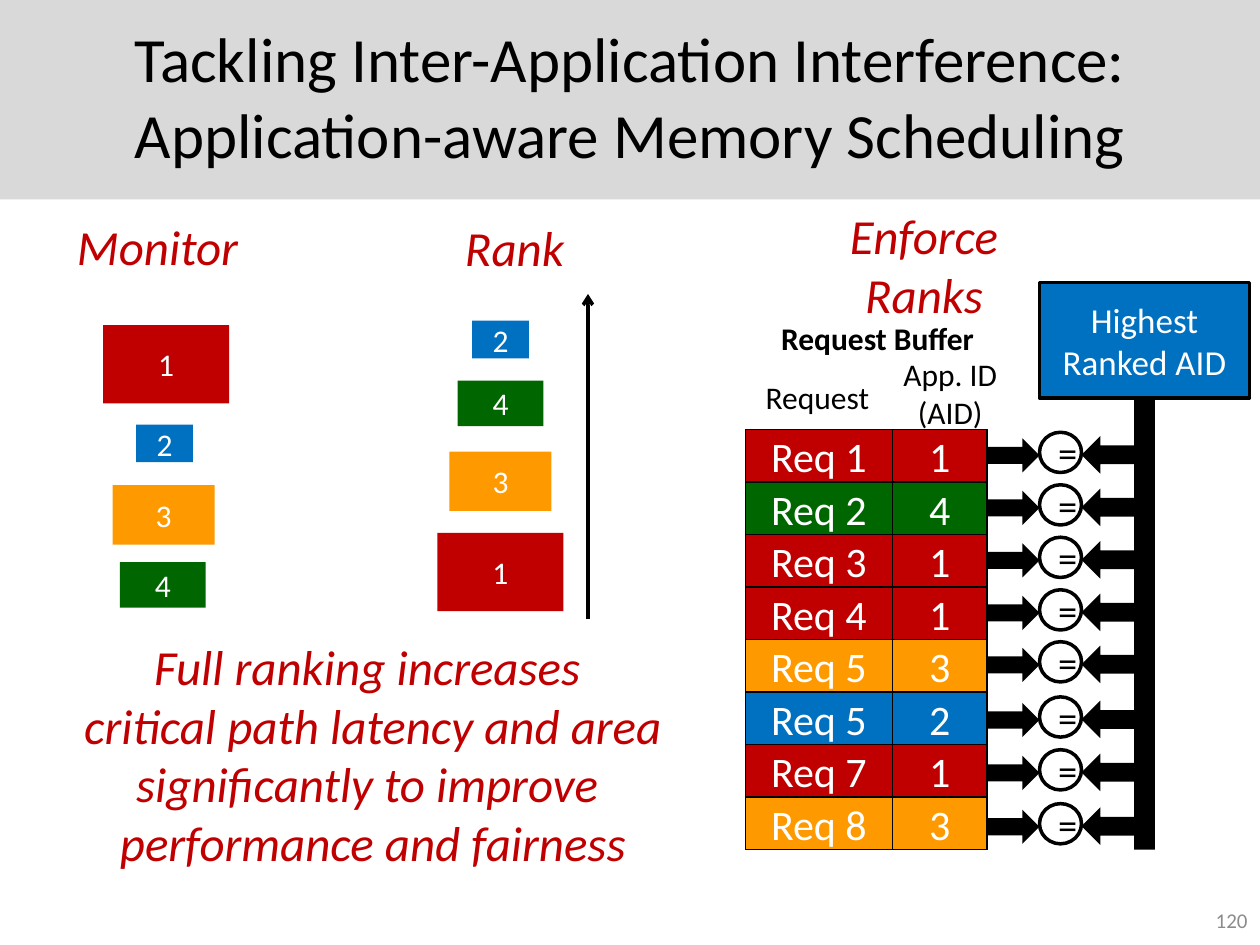
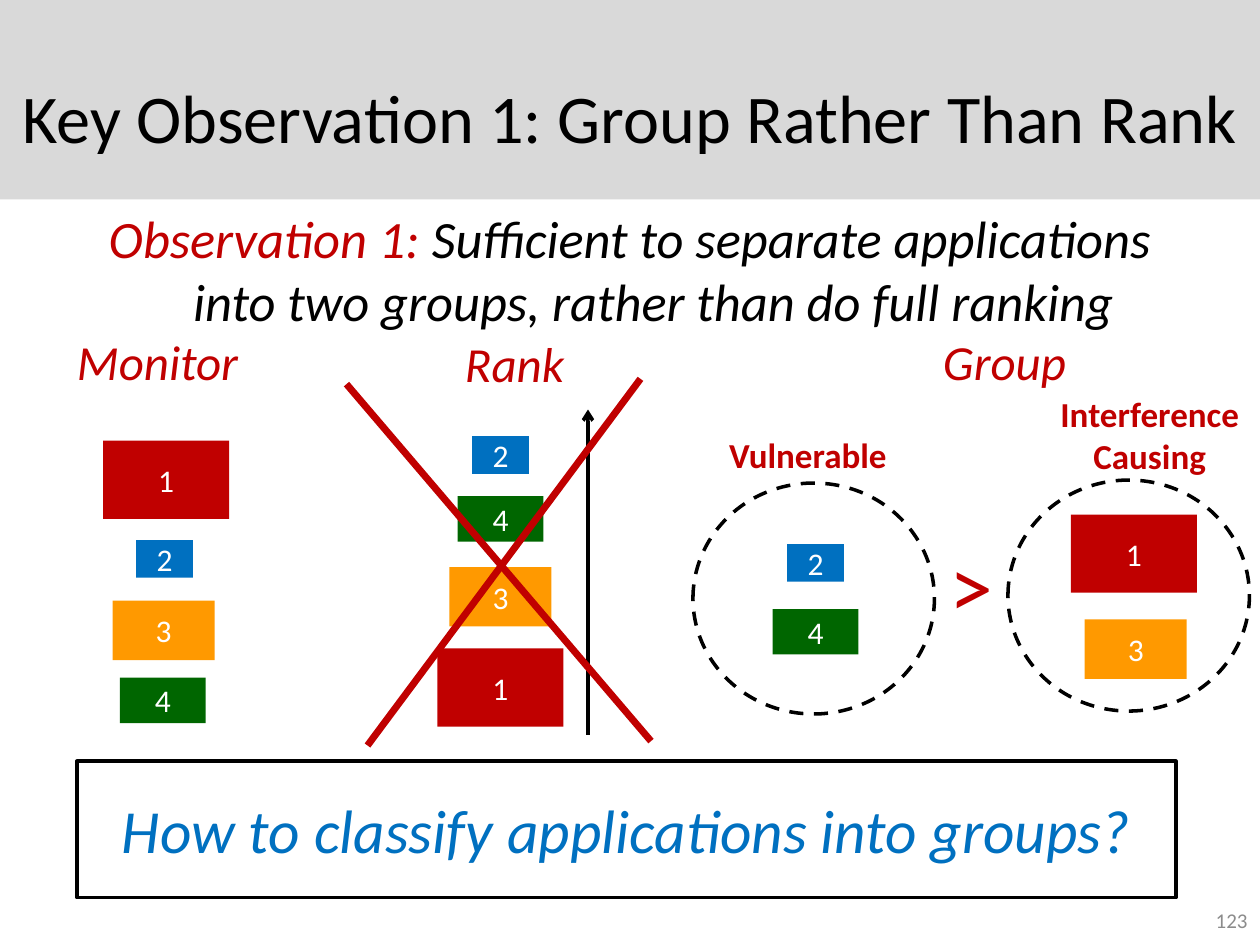
"""Build two slides on application-aware memory scheduling: full ranking versus grouping."""
from lxml.etree import SubElement
from pptx import Presentation
from pptx.dml.color import RGBColor
from pptx.enum.dml import MSO_LINE
from pptx.enum.shapes import MSO_CONNECTOR, MSO_SHAPE as SHAPE
from pptx.enum.text import MSO_ANCHOR as ANCHOR, PP_ALIGN as ALIGN
from pptx.oxml.ns import qn
from pptx.util import Pt

RED = RGBColor(0xC0, 0x00, 0x00)
GREEN = RGBColor(0x00, 0x66, 0x00)
ORANGE = RGBColor(0xFF, 0x99, 0x00)
BLUE = RGBColor(0x00, 0x70, 0xC0)
BLACK = RGBColor(0x00, 0x00, 0x00)
WHITE = RGBColor(0xFF, 0xFF, 0xFF)
BAND = RGBColor(0xD9, 0xD9, 0xD9)
GREY = RGBColor(0x8C, 0x8C, 0x8C)

FONT = "Calibri"
WIDTH, HEIGHT, BAND_HEIGHT = 720, 540, 114

HEADING = {"size": 28, "color": RED, "italic": True}
GROUP_NAME = {"size": 20, "color": RED, "bold": True}
LABEL = {"size": 18, "color": BLACK}

APPS = {
    "1": (72, 44.7, RED),
    "2": (32.5, 21.5, BLUE),
    "3": (58.3, 34, ORANGE),
    "4": (49, 26, GREEN),
}
MONITORED = [("4", 93, 321.2), ("3", 93.5, 277.2), ("2", 94, 242.7), ("1", 95, 185.8)]
RANKED = [("2", 286, 183.3), ("4", 286, 217.5), ("3", 286, 258), ("1", 286, 304.5)]
GROUPED = [("4", 466, 348), ("2", 466, 311), ("3", 649, 354), ("1", 648, 294)]

REQUESTS = [
    ("Req 1", "1", 247), ("Req 2", "4", 277), ("Req 3", "1", 307), ("Req 4", "1", 337),
    ("Req 5", "3", 366.7), ("Req 5", "2", 398.2), ("Req 7", "1", 428.4), ("Req 8", "3", 459.2),
]
BUFFER_LEFT, BUFFER_TOP, ROW_HEIGHT = 426, 245.5, 30
REQUEST_WIDTH, AID_WIDTH = 84, 54

TITLES = {
    "enforce": "Tackling Inter-Application Interference:\nApplication-aware Memory Scheduling",
    "group": "Key Observation 1: Group Rather Than Rank",
}
FULL_RANKING = [
    "Full ranking increases ",
    "critical path latency and area significantly to improve ",
    "performance and fairness",
]
OBSERVATION = [
    ("Observation 1:", RED),
    (" Sufficient to separate applications into two groups, rather than do full ranking", BLACK),
]
QUESTION = "How to classify applications into groups?"


def write(tf, paras, size, color, align=ALIGN.CENTER, anchor=ANCHOR.MIDDLE, **font):
    tf.word_wrap = True
    tf.vertical_anchor = anchor
    for i, text in enumerate([paras] if isinstance(paras, str) else paras):
        p = tf.paragraphs[0] if i == 0 else tf.add_paragraph()
        p.text = text
        p.alignment = align
        for r in p.runs:
            style(r, size, color, **font)


def style(r, size, color, **font):
    r.font.color.rgb = color
    for name, value in {"name": FONT, "size": Pt(size), **font}.items():
        setattr(r.font, name, value)


def add_text(s, paras, x, y, w, h, **fmt):
    tf = s.shapes.add_textbox(Pt(x), Pt(y), Pt(w), Pt(h)).text_frame
    write(tf, paras, **{"anchor": ANCHOR.TOP, **fmt})


def add_box(s, x, y, w, h, fill=None, line=0, kind=SHAPE.RECTANGLE, text="", size=18, color=WHITE, **font):
    sp = s.shapes.add_shape(kind, Pt(x), Pt(y), Pt(w), Pt(h))
    sp.shadow.inherit = False
    if fill is None:
        sp.fill.background()
    else:
        sp.fill.solid()
        sp.fill.fore_color.rgb = fill
    if line:
        sp.line.color.rgb = BLACK
        sp.line.width = Pt(line)
    else:
        sp.line.fill.background()
    if text:
        write(sp.text_frame, text, size, color, **font)
    return sp


def add_line(s, x1, y1, x2, y2, color, width, arrow=False):
    c = s.shapes.add_connector(MSO_CONNECTOR.STRAIGHT, Pt(x1), Pt(y1), Pt(x2), Pt(y2))
    c.line.color.rgb = color
    c.line.width = Pt(width)
    if arrow:
        SubElement(c.line._get_or_add_ln(), qn("a:tailEnd"), type="arrow")
    SubElement(c._element.spPr, qn("a:effectLst"))


def add_apps(s, apps, dy=0):
    for app, center, top in apps:
        w, h, fill = APPS[app]
        add_box(s, center - w / 2, top + dy, w, h, fill, text=app)


def add_monitor_and_rank(s, dy=0):
    add_text(s, "Monitor", 30, 120 + dy, 120, 41, **HEADING)
    add_text(s, "Rank", 234, 121 + dy, 120, 41, **HEADING)
    add_apps(s, MONITORED + RANKED, dy)
    add_line(s, 336, 354 + dy, 336, 168 + dy, BLACK, 2, arrow=True)


def new_slide(prs, title, number, title_box, title_size):
    s = prs.slides.add_slide(prs.slide_layouts[6])
    add_box(s, 0, 0, WIDTH, BAND_HEIGHT, BAND)
    add_text(s, title, *title_box, size=title_size, color=BLACK, anchor=ANCHOR.MIDDLE)
    add_text(s, number, 552, 511, 168, 29, size=12, color=GREY,
             align=ALIGN.RIGHT, anchor=ANCHOR.MIDDLE)
    return s


def add_request_buffer(s):
    add_text(s, "Request Buffer", 417.5, 179, 168, 29, bold=True, **LABEL)
    add_text(s, "Request", 430.5, 212.5, 78, 29, align=ALIGN.LEFT, **LABEL)
    add_text(s, "App. ID (AID)", 492, 199.5, 102, 51, **LABEL)
    add_box(s, BUFFER_LEFT, BUFFER_TOP, REQUEST_WIDTH + AID_WIDTH, ROW_HEIGHT * len(REQUESTS), line=1)
    for i, (request, app, _) in enumerate(REQUESTS):
        y = BUFFER_TOP + i * ROW_HEIGHT
        cells = [(request, BUFFER_LEFT, REQUEST_WIDTH), (app, BUFFER_LEFT + REQUEST_WIDTH, AID_WIDTH)]
        for text, x, w in cells:
            add_box(s, x, y, w, ROW_HEIGHT, APPS[app][2], line=1, text=text, size=24)


def add_comparators(s):
    add_box(s, 648, 227.5, 12, 258, BLACK)
    for _, _, top in REQUESTS:
        add_box(s, 618, top + 2.2, 30, 21.5, BLACK, kind=SHAPE.LEFT_ARROW)
        add_box(s, 564, top + 3.5, 30, 19.5, BLACK, kind=SHAPE.RIGHT_ARROW)
        add_box(s, 594, top, 24, 23, line=2, kind=SHAPE.OVAL, text="=", size=22, color=BLACK)


def build_enforce(prs):
    s = new_slide(prs, TITLES["enforce"], "120", (36, 9.4, 648, 90), 36)
    add_monitor_and_rank(s)
    add_box(s, 594, 161.5, 120, 66, BLUE, line=2, text="Highest Ranked AID", size=20)
    add_text(s, ["Enforce", "Ranks"], 468, 114, 120, 75, **HEADING)
    add_text(s, FULL_RANKING, 0, 360, 426, 143, **HEADING)
    add_request_buffer(s)
    add_comparators(s)


def add_observation(s):
    tf = s.shapes.add_textbox(Pt(36), Pt(BAND_HEIGHT), Pt(648), Pt(384)).text_frame
    tf.word_wrap = True
    p = tf.paragraphs[0]
    p.alignment = ALIGN.CENTER
    p.space_before = Pt(6)
    for name, value in {"marL": Pt(27), "indent": Pt(-27)}.items():
        p._p.get_or_add_pPr().set(name, str(value))
    for text, color in OBSERVATION:
        r = p.add_run()
        r.text = text
        style(r, 30, color, italic=True)


def build_group(prs):
    s = new_slide(prs, TITLES["group"], "123", (0, 21.6, WIDTH, 90), 39)
    add_observation(s)
    add_text(s, "Group", 514, 186, 120, 41, **HEADING)
    for x, y in [(396, 276), (576, 274.3)]:
        sp = add_box(s, x, y, 138, 132, line=2, kind=SHAPE.OVAL)
        sp.line.dash_style = MSO_LINE.DASH
    add_text(s, "Vulnerable", 409.5, 244, 107, 32, align=ALIGN.LEFT, **GROUP_NAME)
    add_text(s, ["Interference", "Causing"], 594, 220.5, 126, 55, **GROUP_NAME)
    add_text(s, ">", 535.7, 300, 30, 68, size=50, color=RED, align=ALIGN.LEFT)
    add_monitor_and_rank(s, dy=66)
    add_line(s, 198, 219.5, 372, 423.5, RED, 4)
    add_line(s, 366, 216.5, 210, 426, RED, 4)
    add_apps(s, GROUPED)
    add_box(s, 44, 435, 628, 78, WHITE, line=2, text=QUESTION, size=35, color=BLUE, italic=True)


def main():
    prs = Presentation()
    prs.slide_width, prs.slide_height = Pt(WIDTH), Pt(HEIGHT)
    build_enforce(prs)
    build_group(prs)
    prs.save("out.pptx")


if __name__ == "__main__":
    main()
